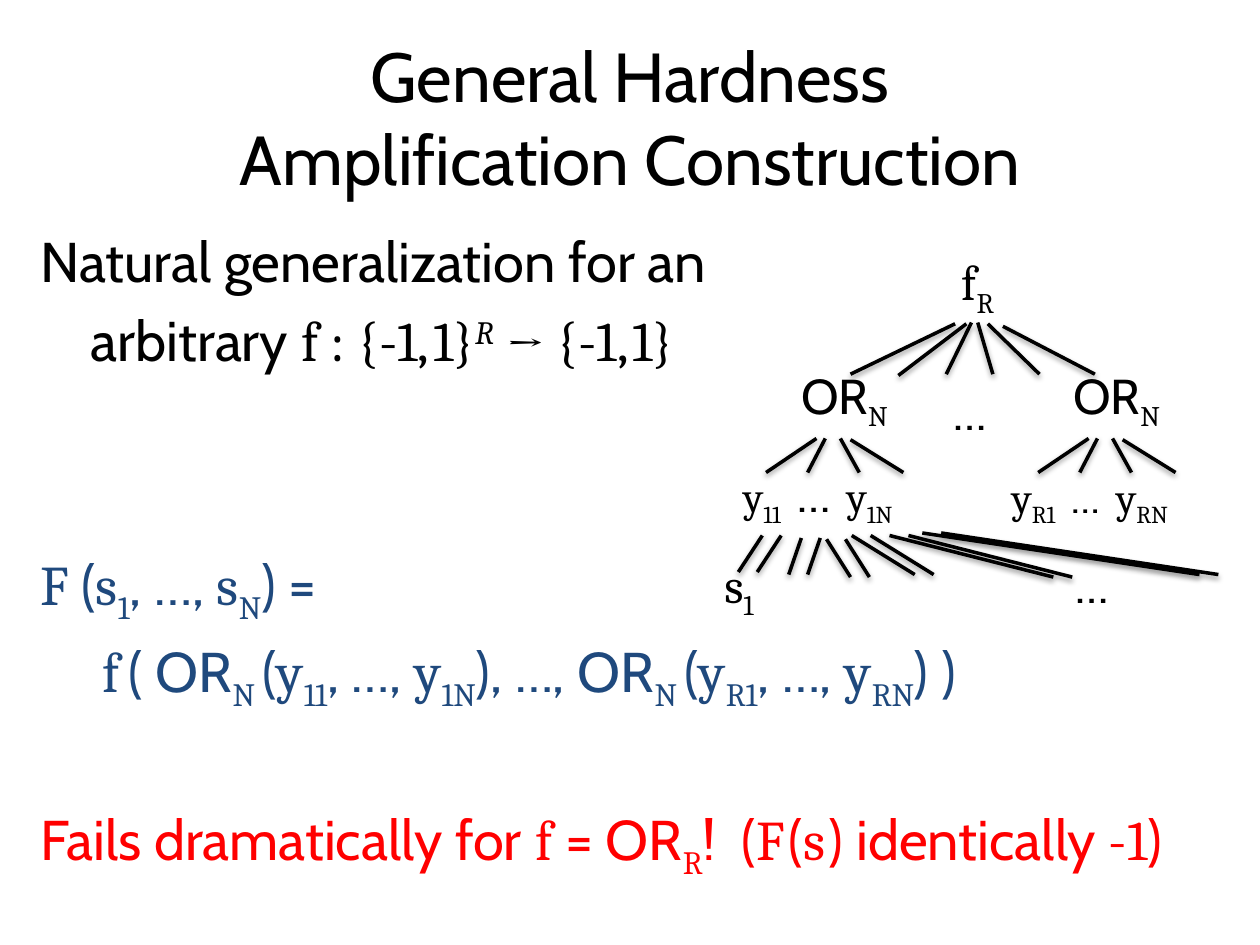
from lxml import etree
from pptx import Presentation
from pptx.dml.color import RGBColor
from pptx.enum.shapes import MSO_CONNECTOR
from pptx.enum.text import MSO_ANCHOR, MSO_AUTO_SIZE, PP_ALIGN
from pptx.oxml import parse_xml
from pptx.oxml.ns import nsdecls, qn
from pptx.util import Inches, Pt

BLACK = RGBColor(0, 0, 0)
NAVY = RGBColor(0x1F, 0x49, 0x7D)
RED = RGBColor(0xFF, 0, 0)

SANS = {"name": "Cabin"}
SERIF = {"name": "Cambria"}
THIN = {"name": "Cambria", "size": Pt(10)}
NARROW = {"name": "Cambria", "size": Pt(23)}
ARROW = {"name": "Cambria", "size": Pt(28)}
SUB = {"name": "Cambria", "baseline": -25}
POWER = {"name": "Cambria", "italic": True, "baseline": 30}

SHADOW = (f'<a:effectLst {nsdecls("a")}><a:outerShdw blurRad="40000" dist="20000" '
          'dir="5400000" rotWithShape="0"><a:srgbClr val="000000">'
          '<a:alpha val="38000"/></a:srgbClr></a:outerShdw></a:effectLst>')

# (indent in inches, space before in points, colour, runs)
STATEMENTS = [
    (0, 0, BLACK, [("Natural generalization for an", SANS)]),
    (0.4, 6.4, BLACK, [
        ("arbitrary ", SANS), ("f : {-1,", SERIF), (" ", THIN), ("1}", SERIF),
        ("R", POWER), (" ", SERIF), ("→", ARROW), (" {-1,", SERIF), (" ", THIN),
        ("1}", SERIF)]),
    (0, 101, NAVY, [
        ("F ", SERIF), ("(", SANS), ("s", SERIF), ("1", SUB), (", …, ", SANS),
        ("s", SERIF), ("N", SUB), (") =", SANS)]),
    (0.49, 6.4, NAVY, [
        ("f", SERIF), (" ", NARROW), ("( OR", SANS), ("N ", SUB), ("(", SANS),
        ("y", SERIF), ("11", SUB), (", …, ", SANS), ("y", SERIF), ("1N", SUB),
        ("), …, OR", SANS), ("N ", SUB), ("(", SANS), ("y", SERIF), ("R1", SUB),
        (", …, ", SANS), ("y", SERIF), ("RN", SUB), (") )", SANS)]),
    (0, 52, RED, [
        ("Fails dramatically for ", SANS), ("f", SERIF), (" = OR", SANS), ("R", SUB),
        ("!  (", SANS), ("F", SERIF), (" ", THIN), ("(", SANS), ("s", SERIF),
        (" ", THIN), (") identically ", SANS), ("-1", SERIF), (")", SANS)]),
]

# Branches as (x1, y1, x2, y2), relative to the part they belong to
ROOT_BRANCHES = [
    (1.93, 0.62, 1.10, 1.02), (2.02, 0.62, 1.48, 1.03), (2.06, 0.61, 1.86, 1.02),
    (2.11, 0.61, 2.23, 1.02), (2.19, 0.62, 2.60, 1.02), (2.31, 0.64, 3.04, 1.02)]
GATE_BRANCHES = [
    (0.23, 0.63, -0.17, 0.90), (0.30, 0.63, 0.16, 0.90),
    (0.42, 0.63, 0.57, 0.90), (0.50, 0.64, 0.92, 0.90)]
INPUT_BRANCHES = [
    (0.40, 2.30, 0.21, 2.59), (0.71, 2.32, 0.61, 2.61), (0.91, 2.33, 1.10, 2.63),
    (1.11, 2.30, 1.61, 2.61), (1.41, 2.30, 2.71, 2.63), (1.67, 2.28, 3.87, 2.61)]
PAIR_GAP = 0.15


def place(shape, left, top, width, height):
    shape.left, shape.top = Inches(left), Inches(top)
    shape.width, shape.height = Inches(width), Inches(height)


def write_runs(paragraph, runs, size, color):
    for text, style in runs:
        run = paragraph.add_run()
        run.text = text
        run.font.color.rgb = color
        for key, value in {"size": Pt(size), **style}.items():
            if key == "baseline":
                run.font._element.set("baseline", str(value * 1000))
            else:
                setattr(run.font, key, value)


def add_label(group, left, top, width, height, runs, size=28, tabs=()):
    label = group.shapes.add_textbox(
        Inches(left), Inches(top), Inches(width), Inches(height))
    label.text_frame.word_wrap = True
    paragraph = label.text_frame.paragraphs[0]
    write_runs(paragraph, runs, size, BLACK)
    if tabs:
        stops = etree.SubElement(paragraph._p.get_or_add_pPr(), qn("a:tabLst"))
        for stop in tabs:
            etree.SubElement(stops, qn("a:tab"), pos=str(Inches(stop)), algn="l")


def add_branches(group, left, top, branches):
    for x1, y1, x2, y2 in branches:
        branch = group.shapes.add_connector(
            MSO_CONNECTOR.STRAIGHT, Inches(left + x1), Inches(top + y1),
            Inches(left + x2), Inches(top + y2))
        branch.line.color.rgb = BLACK
        branch.line.width = Pt(2)
        branch._element.spPr.append(parse_xml(SHADOW))


def add_gate(group, left, top):
    """An OR node with the fan of branches below it."""
    add_label(group, left + 0.01, top, 1.22, 0.57, [("OR", SANS), ("N", SUB)])
    add_branches(group, left, top, GATE_BRANCHES)


def add_title(slide, left, top, width, height):
    title = slide.shapes.title
    place(title, left, top, width, height)
    frame = title.text_frame
    frame.auto_size = MSO_AUTO_SIZE.NONE
    frame.vertical_anchor = MSO_ANCHOR.MIDDLE
    paragraph = frame.paragraphs[0]
    paragraph.text = "General Hardness\vAmplification Construction"
    paragraph.alignment = PP_ALIGN.CENTER
    for run in paragraph.runs:
        run.font.name, run.font.size = "Cabin", Pt(39.6)
        run.font.color.rgb = BLACK


def add_statements(slide, left, top, width, height):
    body = slide.placeholders[1]
    place(body, left, top, width, height)
    frame = body.text_frame
    frame.auto_size = MSO_AUTO_SIZE.NONE
    for index, (indent, gap, color, runs) in enumerate(STATEMENTS):
        paragraph = frame.add_paragraph() if index else frame.paragraphs[0]
        paragraph.space_before = Pt(gap)
        props = paragraph._p.get_or_add_pPr()
        props.set("marL", str(Inches(indent)))
        props.set("indent", "0")
        etree.SubElement(props, qn("a:buNone"))
        write_runs(paragraph, runs, 32, color)


def add_tree(slide, left, top):
    """The formula tree: f over OR gates over y variables over s inputs."""
    tree = slide.shapes.add_group_shape()
    add_branches(tree, left, top, ROOT_BRANCHES)
    add_label(tree, left + 1.88, top, 0.62, 0.57, [("f", SERIF), ("R", SUB)])
    add_gate(tree, left + 0.6, top + 0.9)
    add_gate(tree, left + 2.76, top + 0.9)
    add_label(tree, left + 1.82, top + 1.03, 0.68, 0.57, [("…", SANS)])

    dots = {"name": "Cabin", "size": Pt(28)}
    for x, y, width, row, dots_style, tabs in [
            (0.15, 1.68, 1.85, "1", dots, (0.43, 0.82)),
            (2.28, 1.74, 2.00, "R", SANS, (0.48, 0.83))]:
        add_label(tree, left + x, top + y, width, 0.77,
                  [("y", SERIF), (row + "1\t", SUB), ("…\t", dots_style),
                   ("y", SERIF), (row + "N", SUB)], 24, tabs)

    add_label(tree, left, top + 2.4, 4.3, 0.57,
              [("s", SERIF), ("1\t", SUB), ("…", SANS)], tabs=(2.79,))
    for shift in (0, PAIR_GAP):
        add_branches(tree, left + shift, top, INPUT_BRANCHES)


def main():
    deck = Presentation()
    deck.slide_width, deck.slide_height = Inches(10), Inches(7.5)
    slide = deck.slides.add_slide(deck.slide_layouts[1])
    add_title(slide, 0.5, 0.3, 9, 1.25)
    add_statements(slide, 0.22, 1.75, 9.77, 5.27)
    add_tree(slide, 5.65, 1.95)
    deck.save("out.pptx")


if __name__ == "__main__":
    main()
